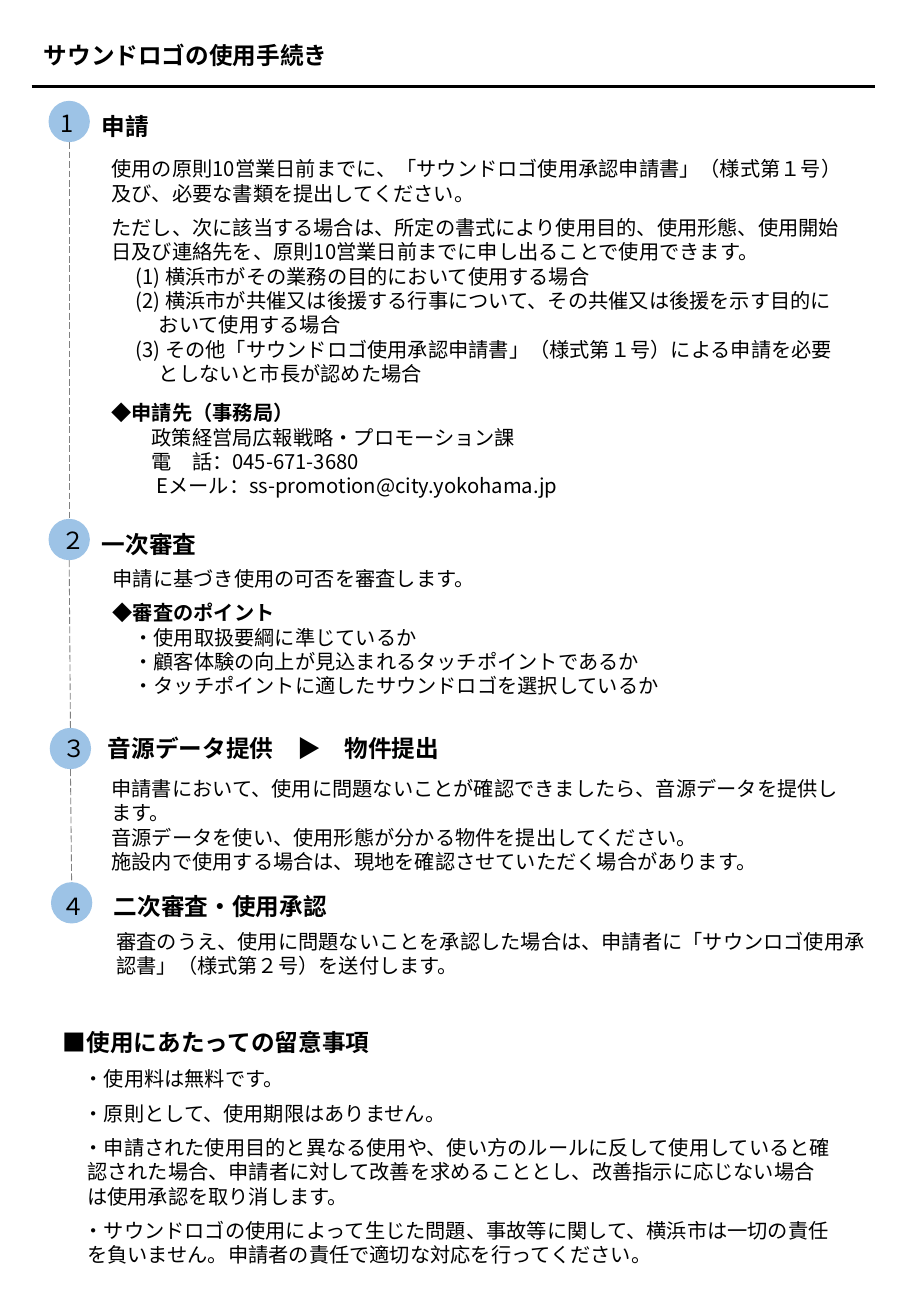
from pptx import Presentation
from pptx.dml.color import RGBColor
from pptx.enum import dml, shapes, text
from pptx.oxml.ns import qn
from pptx.util import Inches, Pt
from lxml import etree

FONT = "Noto Sans CJK JP"
BLACK, GREY, BLUE = "000000", "808080", "9DC3E6"
DIAMETER = 0.34
HEADING_HEIGHT = 0.34

# Body paragraphs: (text, first-line start, left margin, space before, bold)
APPLICATION = [
    ("使用の原則10営業日前までに、「サウンドロゴ使用承認申請書」（様式第１号）及び、必要な書類を提出してください。", 0, 0, 0, False),
    ("ただし、次に該当する場合は、所定の書式により使用目的、使用形態、使用開始日及び連絡先を、原則10営業日前までに申し出ることで使用できます。", 0, 0, 6, False),
    ("(1) 横浜市がその業務の目的において使用する場合", 0.2, 0.39, 0, False),
    ("(2) 横浜市が共催又は後援する行事について、その共催又は後援を示す目的において使用する場合", 0.2, 0.39, 0, False),
    ("(3) その他「サウンドロゴ使用承認申請書」（様式第１号）による申請を必要としないと市長が認めた場合", 0.2, 0.39, 0, False),
    ("◆申請先（事務局）", 0, 0, 9, True),
    ("政策経営局広報戦略・プロモーション課", 0.33, 0.33, 0, False),
    ("電　話：045-671-3680", 0.33, 0.33, 0, False),
    ("Eメール：ss-promotion@city.yokohama.jp", 0.37, 0.37, 0, False),
]
FIRST_REVIEW = [
    ("申請に基づき使用の可否を審査します。", 0, 0, 6, False),
    ("◆審査のポイント", 0, 0, 6, True),
    ("・使用取扱要綱に準じているか", 0.17, 0.17, 0, False),
    ("・顧客体験の向上が見込まれるタッチポイントであるか", 0.17, 0.17, 0, False),
    ("・タッチポイントに適したサウンドロゴを選択しているか", 0.17, 0.17, 0, False),
]
SUBMISSION = [
    ("申請書において、使用に問題ないことが確認できましたら、音源データを提供します。", 0, 0, 6, False),
    ("音源データを使い、使用形態が分かる物件を提出してください。", 0, 0, 0, False),
    ("施設内で使用する場合は、現地を確認させていただく場合があります。", 0, 0, 0, False),
]
APPROVAL = [
    ("審査のうえ、使用に問題ないことを承認した場合は、申請者に「サウンロゴ使用承認書」（様式第２号）を送付します。", 0, 0, 6, False),
]
NOTES = [
    ("・使用料は無料です。", 0.17, 0.2, 6, False),
    ("・原則として、使用期限はありません。", 0.17, 0.2, 6, False),
    ("・申請された使用目的と異なる使用や、使い方のルールに反して使用していると確認された場合、申請者に対して改善を求めることとし、改善指示に応じない場合は使用承認を取り消します。", 0.17, 0.2, 6, False),
    ("・サウンドロゴの使用によって生じた問題、事故等に関して、横浜市は一切の責任を負いません。申請者の責任で適切な対応を行ってください。", 0.17, 0.2, 6, False),
]

# Steps: circle position, number and its position, heading and its position, body box, body
STEPS = [
    ((0.4, 0.83), "1", (0.4, 0.85), "申請", (0.74, 0.87), (0.82, 1.24, 6.24, 2.94), APPLICATION),
    ((0.4, 4.27), "２", (0.41, 4.28), "一次審査", (0.74, 4.31), (0.83, 4.61, 6.24, 1.19), FIRST_REVIEW),
    ((0.41, 5.99), "３", (0.42, 5.99), "音源データ提供　▶　物件提出", (0.79, 5.99), (0.82, 6.34, 6.24, 0.71), SUBMISSION),
    ((0.42, 7.26), "４", (0.41, 7.29), "二次審査・使用承認", (0.84, 7.29), (0.86, 7.6, 6.39, 0.5), APPROVAL),
]


def color(value):
    return RGBColor.from_string(value)


def format_paragraph(paragraph, size, bold=False):
    font = paragraph.font
    font.name, font.size, font.bold = FONT, Pt(size), bold
    font.color.rgb = color(BLACK)
    latin = font._element.find(qn("a:latin"))
    east_asian = etree.Element(qn("a:ea"), typeface=FONT)
    latin.addnext(east_asian)
    paragraph.alignment = text.PP_ALIGN.LEFT


def indent(paragraph, start, left):
    properties = paragraph._p.get_or_add_pPr()
    properties.set("marL", str(Inches(left)))
    properties.set("indent", str(Inches(start) - Inches(left)))


def add_text_box(slide, box, paragraphs, heading=None):
    """Write an optional 14 pt heading followed by 12 pt body paragraphs."""
    frame = slide.shapes.add_textbox(*map(Inches, box)).text_frame
    frame.word_wrap = True
    entries = [(heading, 0, 0, 0, True)] if heading else []
    for number, entry in enumerate(entries + paragraphs):
        content, start, left, before, bold = entry
        paragraph = frame.add_paragraph() if number else frame.paragraphs[0]
        paragraph.text = content
        paragraph.space_before = Pt(before)
        indent(paragraph, start, left)
        is_heading = heading and number == 0
        format_paragraph(paragraph, 14 if is_heading else 12, bold)


def add_label(slide, position, width, content, bold):
    box = (*position, width, HEADING_HEIGHT)
    frame = slide.shapes.add_textbox(*map(Inches, box)).text_frame
    frame.word_wrap = True
    frame.text = content
    format_paragraph(frame.paragraphs[0], 14, bold)


def add_circle(slide, position):
    circle = slide.shapes.add_shape(
        shapes.MSO_SHAPE.OVAL, *map(Inches, (*position, DIAMETER, DIAMETER)))
    circle.shadow.inherit = False
    circle.fill.solid()
    circle.fill.fore_color.rgb = color(BLUE)
    circle.line.fill.background()


def add_line(slide, start, end, line_color, width, dash=None):
    line = slide.shapes.add_connector(
        shapes.MSO_CONNECTOR.STRAIGHT, *map(Inches, (*start, *end)))
    line.line.color.rgb = color(line_color)
    line.line.width = Pt(width)
    if dash:
        line.line.dash_style = dash
    etree.SubElement(line._element.spPr, qn("a:effectLst"))


def add_title(slide, content):
    title = slide.shapes.title
    title.left, title.top, title.width, title.height = map(
        Inches, (0.26, 0.29, 6.67, HEADING_HEIGHT))
    frame = title.text_frame
    frame.text = content
    frame.word_wrap = True
    frame.auto_size = text.MSO_AUTO_SIZE.NONE
    frame.vertical_anchor = text.MSO_ANCHOR.TOP
    format_paragraph(frame.paragraphs[0], 14, True)


def main():
    presentation = Presentation()
    presentation.slide_width = Inches(7.5)
    presentation.slide_height = Inches(10.83)
    slide = presentation.slides.add_slide(presentation.slide_layouts[5])

    # Title and rule
    add_title(slide, "サウンドロゴの使用手続き")
    add_line(slide, (0.26, 0.71), (7.2, 0.71), BLACK, 1.5)

    # Dashed lines between consecutive steps
    radius = DIAMETER / 2
    for (upper, *_), (lower, *_) in zip(STEPS, STEPS[1:]):
        add_line(slide, (upper[0] + radius, upper[1] + DIAMETER),
                 (lower[0] + radius, lower[1]), GREY, 0.5,
                 dml.MSO_LINE.LONG_DASH)

    # Steps
    for circle, number, number_at, heading, heading_at, box, body in STEPS:
        add_circle(slide, circle)
        add_label(slide, number_at, 0.42, number, False)
        add_label(slide, heading_at, 3.13, heading, True)
        add_text_box(slide, box, body)

    # Points to note
    add_text_box(slide, (0.42, 8.41, 6.53, 2.09), NOTES, "■使用にあたっての留意事項")

    presentation.save("out.pptx")


if __name__ == "__main__":
    main()
